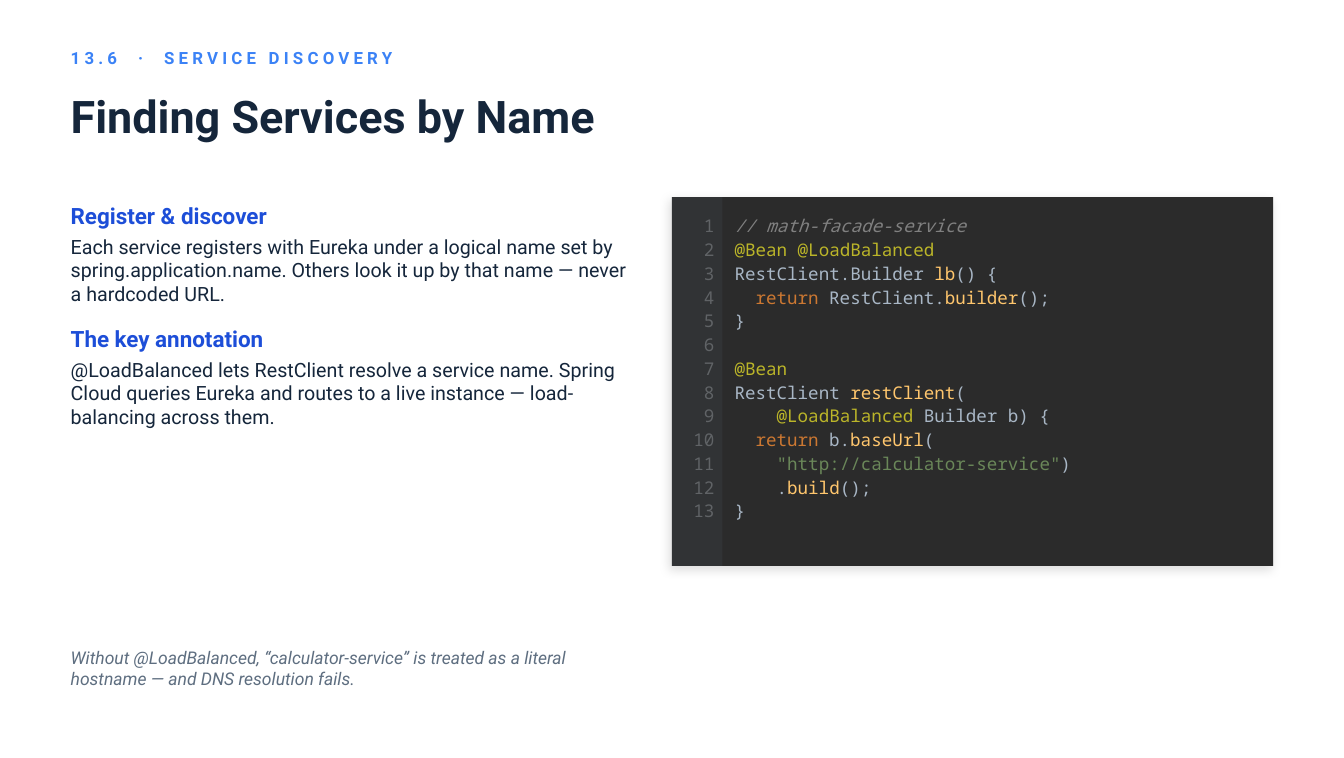
"""Build the slide on finding services by name."""
import lxml.etree
import pptx
import pptx.dml.color
import pptx.enum.shapes
import pptx.enum.text
import pptx.oxml.ns
import pptx.util

COLUMNS, ROWS = 133, 75
CELL = pptx.util.Inches(0.1)
LEFT, TEXT_WIDTH = 7, 56
PANEL_LEFT, PANEL_TOP, PANEL_HEIGHT = 66.5, 19.5, 36.5
CODE_TOP, LINE_PITCH, LINE_HEIGHT = 21.3, 2.35, 2.3
CODE_SIZE = 12.5
SANS, MONO = "Roboto", "Noto Sans Mono"
NAVY, BLUE = "15263B", "1D4ED8"
PLAIN, KEYWORD, METHOD = "A9B7C6", "CC7832", "FFC66D"
ANNOTATION, STRING, COMMENT = "BBB529", "6A8759", "808080"

CODE = [
    [("// math-facade-service", COMMENT)],
    [("@Bean @LoadBalanced", ANNOTATION)],
    [("RestClient.Builder ", PLAIN), ("lb", METHOD), ("() {", PLAIN)],
    [("  ", PLAIN), ("return", KEYWORD), (" RestClient.", PLAIN), ("builder", METHOD), ("();", PLAIN)],
    [("}", PLAIN)],
    [],
    [("@Bean", ANNOTATION)],
    [("RestClient ", PLAIN), ("restClient", METHOD), ("(", PLAIN)],
    [("    ", PLAIN), ("@LoadBalanced", ANNOTATION), (" Builder b) {", PLAIN)],
    [("  ", PLAIN), ("return", KEYWORD), (" b.", PLAIN), ("baseUrl", METHOD), ("(", PLAIN)],
    [("    ", PLAIN), ('"http://calculator-service"', STRING), (")", PLAIN)],
    [("    .", PLAIN), ("build", METHOD), ("();", PLAIN)],
    [("}", PLAIN)],
]

TOPICS = [
    ("Register & discover",
     "Each service registers with Eureka under a logical name set by "
     "spring.application.name. Others look it up by that name — never a hardcoded URL."),
    ("The key annotation",
     "@LoadBalanced lets RestClient resolve a service name. Spring Cloud queries Eureka "
     "and routes to a live instance — load-balancing across them."),
]


def rgb(value):
    """Return the colour for a hex string."""
    return pptx.dml.color.RGBColor.from_string(value)


def grid(*cells):
    """Turn grid cells into slide lengths."""
    return [round(cell * CELL) for cell in cells]


def format_run(run, size, color, font=SANS, bold=False, italic=False):
    """Set the font of one run."""
    run.font.name = font
    run.font.size = pptx.util.Pt(size)
    run.font.bold = bold
    run.font.italic = italic
    run.font.color.rgb = rgb(color)


def add_text_frame(slide, *box):
    """Add a wrapping text box without margins and return its frame."""
    frame = slide.shapes.add_textbox(*grid(*box)).text_frame
    frame.word_wrap = True
    frame.margin_left = frame.margin_right = frame.margin_top = frame.margin_bottom = 0
    return frame


def add_label(slide, box, text, size, color, **style):
    """Add a one-paragraph text box and return its frame."""
    frame = add_text_frame(slide, *box)
    frame.text = text
    format_run(frame.paragraphs[0].runs[0], size, color, **style)
    return frame


def add_heading(slide, top, height, text, size, color, spacing=0):
    """Add a bold, vertically centred line across the slide."""
    frame = add_label(slide, (LEFT, top, 119, height), text, size, color, bold=True)
    frame.vertical_anchor = pptx.enum.text.MSO_ANCHOR.MIDDLE
    if spacing:
        properties = frame.paragraphs[0].runs[0].font._element
        properties.set("spc", str(spacing * 100))


def add_topics(slide):
    """Add the headed paragraphs on the left."""
    frame = add_text_frame(slide, LEFT, 20, TEXT_WIDTH, 40)
    for index, (heading, body) in enumerate(TOPICS):
        title = frame.add_paragraph() if index else frame.paragraphs[0]
        title.text = heading
        title.space_after = pptx.util.Pt(4)
        format_run(title.runs[0], 16, BLUE, bold=True)
        paragraph = frame.add_paragraph()
        paragraph.text = body
        if index < len(TOPICS) - 1:
            paragraph.space_after = pptx.util.Pt(14)
        format_run(paragraph.runs[0], 14, NAVY)


def add_panel(slide, width, color):
    """Add a plain rectangle from the left edge of the code panel."""
    shape = slide.shapes.add_shape(
        pptx.enum.shapes.MSO_SHAPE.RECTANGLE, *grid(PANEL_LEFT, PANEL_TOP, width, PANEL_HEIGHT))
    shape.shadow.inherit = False
    shape.fill.solid()
    shape.fill.fore_color.rgb = rgb(color)
    shape.line.fill.background()
    return shape


def add_shadow(shape):
    """Give a shape a soft black shadow."""
    name = pptx.oxml.ns.qn
    effects = shape._element.spPr.find(name("a:effectLst"))
    shadow = lxml.etree.SubElement(
        effects, name("a:outerShdw"), blurRad=str(pptx.util.Pt(7)), dist=str(pptx.util.Pt(3)),
        dir=str(135 * 60000), algn="bl", rotWithShape="0")
    color = lxml.etree.SubElement(shadow, name("a:srgbClr"), val="000000")
    lxml.etree.SubElement(color, name("a:alpha"), val="12000")


def add_code_line(slide, number, parts):
    """Add one numbered line of coloured code."""
    top = CODE_TOP + (number - 1) * LINE_PITCH
    gutter = add_label(slide, (66.7, top, 4, LINE_HEIGHT), str(number), CODE_SIZE, "606366", font=MONO)
    gutter.paragraphs[0].alignment = pptx.enum.text.PP_ALIGN.RIGHT
    if parts:
        paragraph = add_text_frame(slide, 72.7, top, 51.8, LINE_HEIGHT).paragraphs[0]
        for text, color in parts:
            run = paragraph.add_run()
            run.text = text
            format_run(run, CODE_SIZE, color, font=MONO, italic=color == COMMENT)


def main():
    """Build and save the slide."""
    presentation = pptx.Presentation()
    presentation.slide_width, presentation.slide_height = grid(COLUMNS, ROWS)
    slide = presentation.slides.add_slide(presentation.slide_layouts[6])
    add_heading(slide, 4.2, 3, "13.6  ·  SERVICE DISCOVERY", 12, "3B82F6", spacing=3)
    add_heading(slide, 7.2, 8.5, "Finding Services by Name", 32, NAVY)
    add_topics(slide)
    add_shadow(add_panel(slide, 59.5, "2B2B2B"))
    add_panel(slide, 5, "313335")
    for number, parts in enumerate(CODE, 1):
        add_code_line(slide, number, parts)
    add_label(
        slide, (LEFT, 64, TEXT_WIDTH, 7),
        "Without @LoadBalanced, “calculator-service” is treated as a literal hostname "
        "— and DNS resolution fails.", CODE_SIZE, "5E6E80", italic=True)
    presentation.save("out.pptx")


if __name__ == "__main__":
    main()
